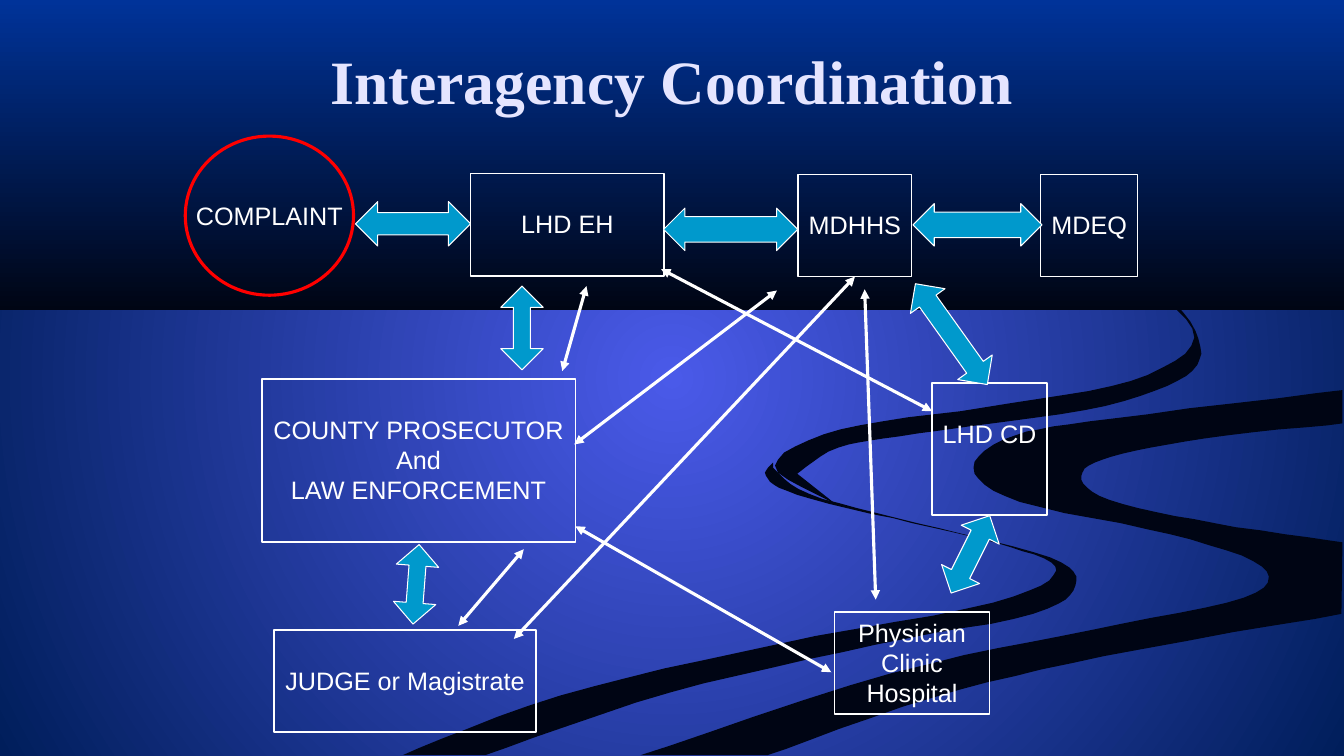
from lxml.etree import SubElement
from pptx import Presentation
from pptx.dml.color import RGBColor
from pptx.enum.shapes import MSO_CONNECTOR, MSO_SHAPE
from pptx.enum.text import MSO_ANCHOR, PP_ALIGN
from pptx.oxml.ns import qn
from pptx.util import Cm, Pt

WHITE = RGBColor(0xFF, 0xFF, 0xFF)
RED = RGBColor(0xFF, 0x00, 0x00)
CYAN = RGBColor(0x00, 0x99, 0xCC)
LAVENDER = RGBColor(0xE5, 0xE5, 0xFF)
GLOW = RGBColor(0x4A, 0x5A, 0xE9)
NAVY = RGBColor(0x00, 0x1E, 0x5B)
BLUE = RGBColor(0x00, 0x33, 0x99)
INK = RGBColor(0x00, 0x05, 0x14)

ROAD_UNIT = Cm(2.54) / 100
ROADS = [
    [[(767, 459), (760, 472), (791, 491), (905, 519), (1003, 543), (1048, 566),
      (985, 598), (772, 639), (556, 690), (400, 749)],
     [(482, 749), (665, 687), (867, 640), (1025, 609), (1067, 581), (1042, 553),
      (910, 519), (803, 490), (767, 464)]],
    [[(1332, 387), (1106, 415), (1007, 432), (966, 464), (1012, 498), (1161, 530),
      (1252, 562), (1234, 593), (1083, 625), (884, 668), (636, 749)],
     [(762, 749), (926, 692), (1095, 651), (1331, 609)],
     [(1332, 538), (1205, 519), (1101, 496), (1073, 472), (1103, 453), (1195, 435),
      (1332, 420)]],
    [[(1017, 233), (1127, 279), (1185, 335), (1122, 378), (978, 404), (834, 426),
      (769, 462), (829, 500)],
     [(791, 470), (832, 444), (911, 430), (1076, 407), (1168, 378), (1191, 344),
      (1152, 291), (1017, 233)]],
]

AGENCIES = [
    ("LHD EH", 7.19, 0.94, 4.88, 2.59),
    ("COUNTY PROSECUTOR\nAnd\nLAW ENFORCEMENT", 1.93, 6.12, 7.9, 4.11),
    ("MDHHS", 15.44, 0.97, 2.87, 2.57),
    ("LHD CD", 18.82, 6.22, 2.9, 3.33),
    ("JUDGE or Magistrate", 2.24, 12.45, 6.6, 2.57),
    ("MDEQ", 21.56, 0.97, 2.44, 2.57),
]
BLOCK_ARROWS = [
    (7.95, 3.78, 2.11, 0, 0.4),
    (5.28, 10.29, 2.01, 4.4, 0.4),
    (19.25, 9.45, 2.18, 26.5, 0.48),
    (18.77, 3.43, 3.12, 324.5, 0.48),
    (13.21, 0.66, 3.38, 270, 0.6),
    (19.43, 0.61, 3.25, 270, 0.6),
]
LINKS = [
    (10.11, 3.78, 9.5, 5.92),
    (14.91, 3.89, 9.8, 7.77),
    (16.28, 13.51, 9.83, 9.83),
    (6.88, 12.34, 8.53, 10.41),
    (17.12, 3.86, 17.4, 11.68),
    (11.99, 3.35, 18.82, 6.93),
]


def add_text(tf, text, size=18, font="Arial", color=WHITE, bold=False,
             anchor=MSO_ANCHOR.TOP, top=0.13, wrap=False):
    """Fill a text frame with centred paragraphs, one per line of text."""
    tf.word_wrap, tf.vertical_anchor, tf.margin_top = wrap, anchor, Cm(top)
    for i, line in enumerate(text.split("\n")):
        p = tf.add_paragraph() if i else tf.paragraphs[0]
        p.alignment = PP_ALIGN.CENTER
        r = p.add_run()
        r.text = line
        r.font.size, r.font.name, r.font.bold = Pt(size), font, bold
        r.font.color.rgb = color


def add_gradient(fill, first, last):
    """Give a fill a gradient of two colours."""
    fill.gradient()
    for stop, color in zip(fill.gradient_stops, (first, last)):
        stop.color.rgb = color


def add_figure(s, kind, x, y, w, h, fill=None, line=WHITE, weight=1):
    """Add a preset shape without shadow."""
    sp = s.shapes.add_shape(kind, x, y, w, h)
    sp.shadow.inherit = False
    if fill is None:
        sp.fill.background()
    else:
        sp.fill.solid()
        sp.fill.fore_color.rgb = fill
    sp.line.color.rgb, sp.line.width = line, Pt(weight)
    return sp


def add_link(s, x1, y1, x2, y2):
    """Add a white line with an arrowhead at both ends."""
    c = s.shapes.add_connector(MSO_CONNECTOR.STRAIGHT, x1, y1, x2, y2)
    c.line.color.rgb, c.line.width = WHITE, Pt(2.25)
    ln = c.element.xpath(".//a:ln")[0]
    for end in ("a:headEnd", "a:tailEnd"):
        SubElement(ln, qn(end), type="triangle")
    SubElement(c.element.xpath("p:spPr")[0], qn("a:effectLst"))
    return c


def smooth(edge, steps=6):
    """Return points on a Catmull-Rom curve through the points of an edge."""
    padded = [edge[0], *edge, edge[-1]]
    curve = [edge[0]]
    for quad in zip(padded, padded[1:], padded[2:], padded[3:]):
        for t in (k / steps for k in range(1, steps + 1)):
            curve.append(tuple(
                b + t * (c - a + t * (2 * a - 5 * b + 4 * c - d
                                      + t * (3 * b - 3 * c + d - a))) / 2
                for a, b, c, d in zip(*quad)))
    return curve


def add_road(s, x, y, edges):
    """Draw a dark road bounded by smooth edges."""
    start, *points = [point for edge in edges for point in smooth(edge)]
    builder = s.shapes.build_freeform(*start, scale=ROAD_UNIT)
    builder.add_line_segments(points, close=True)
    road = builder.convert_to_shape(x, y)
    road.shadow.inherit = False
    road.fill.solid()
    road.fill.fore_color.rgb = INK
    road.line.fill.background()


def backdrop(s, x, y, w, h):
    """Paint the glowing background, the winding roads and the sky band."""
    add_gradient(s.background.fill, GLOW, NAVY)
    grad = s.element.xpath(".//p:bg//a:gradFill")[0]
    grad.remove(grad.find(qn("a:lin")))
    glow = SubElement(grad, qn("a:path"), path="circle")
    SubElement(glow, qn("a:fillToRect"), dict.fromkeys("ltrb", "50000"))
    for edges in ROADS:
        add_road(s, x, y, edges)
    sky = add_figure(s, MSO_SHAPE.RECTANGLE, x, y, w, h)
    add_gradient(sky.fill, BLUE, INK)
    sky.fill.gradient_angle = 270
    sky.line.fill.background()


def heading(s, x, y, w, h):
    """Place the title in front of the backdrop."""
    title = s.shapes.title
    title.left, title.top, title.width, title.height = x, y, w, h
    title.element.getparent().append(title.element)
    add_text(title.text_frame, "Interagency Coordination", size=44, font="Times New Roman",
             color=LAVENDER, bold=True, anchor=MSO_ANCHOR.MIDDLE, wrap=True)


def network(s, x, y):
    """Draw the agencies and the arrows between them."""
    boxes = {}
    for name, dx, dy, w, h in AGENCIES:
        sp = add_figure(s, MSO_SHAPE.RECTANGLE, x + Cm(dx), y + Cm(dy), Cm(w), Cm(h))
        add_text(sp.text_frame, name, top=0.88)
        boxes[name] = sp
    clinic = add_figure(s, MSO_SHAPE.RECTANGLE, x + Cm(16.36), y + Cm(11.99), Cm(3.91), Cm(2.57))
    add_text(clinic.text_frame, "Physician Clinic\nHospital", wrap=True)
    for dx, dy, length, angle, tip in BLOCK_ARROWS:
        arrow = add_figure(s, MSO_SHAPE.UP_DOWN_ARROW, x + Cm(dx), y + Cm(dy),
                           Cm(1.07), Cm(length), fill=CYAN, weight=0.75)
        arrow.rotation = angle
        arrow.adjustments[0], arrow.adjustments[1] = 0.5, tip
    for ends in LINKS:
        x1, y1, x2, y2 = map(Cm, ends)
        add_link(s, x + x1, y + y1, x + x2, y + y2)
    judge_link = add_link(s, x + Cm(16.71), y + Cm(3.4), x + Cm(8.28), y + Cm(12.67))
    judge_link.begin_connect(boxes["MDHHS"], 2)
    complaint = add_figure(s, MSO_SHAPE.OVAL, x, y, Cm(4.24), Cm(4.01), line=RED, weight=2.25)
    add_text(complaint.text_frame, "COMPLAINT", anchor=MSO_ANCHOR.MIDDLE)
    add_figure(s, MSO_SHAPE.LEFT_RIGHT_ARROW, x + Cm(4.29), y + Cm(1.65),
               Cm(2.9), Cm(1.12), fill=CYAN, weight=0.75)


def main():
    """Build the slide and save it."""
    prs = Presentation()
    prs.slide_width, prs.slide_height = Cm(33.87), Cm(19.05)
    s = prs.slides.add_slide(prs.slide_layouts[5])
    backdrop(s, 0, 0, prs.slide_width, Cm(7.82))
    heading(s, Cm(5.51), Cm(0.43), Cm(22.86), Cm(3.18))
    network(s, Cm(4.67), Cm(3.43))
    prs.save("out.pptx")


if __name__ == "__main__":
    main()
